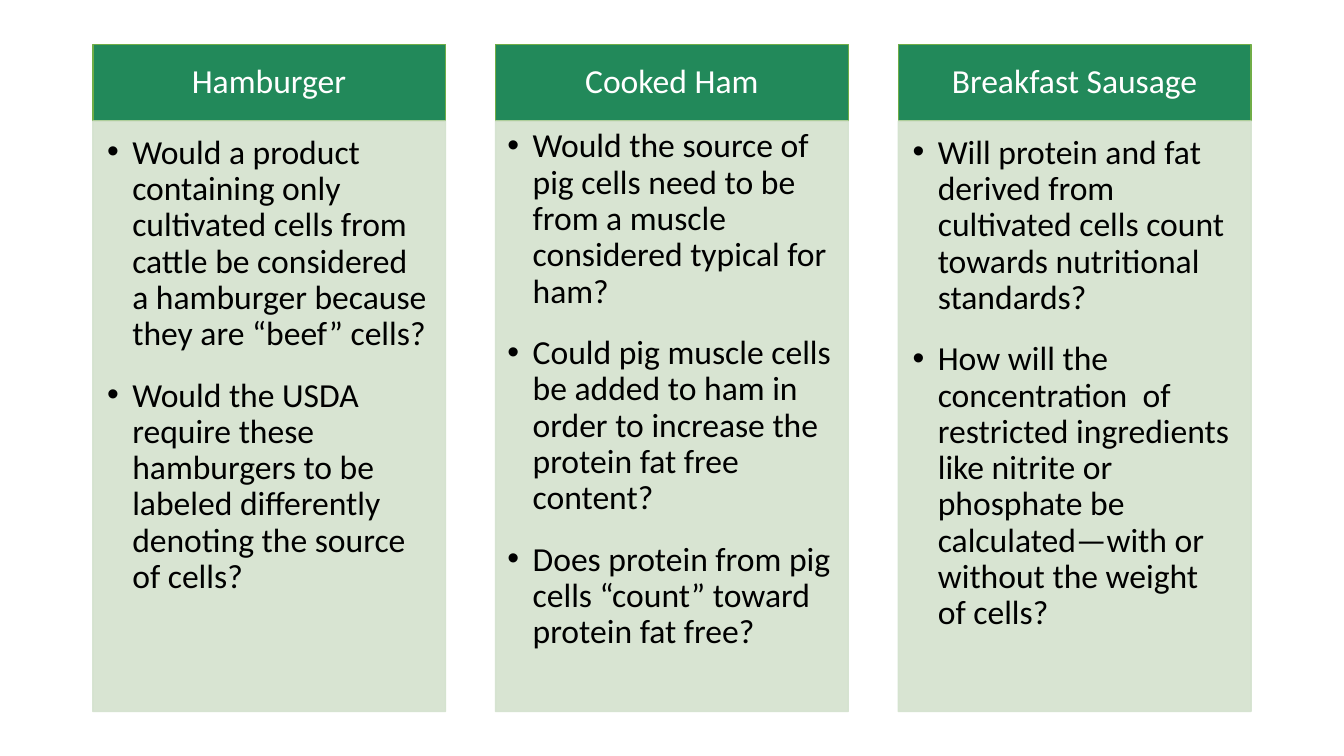
from lxml.etree import SubElement
from pptx import Presentation
from pptx.dml.color import RGBColor
from pptx.enum.shapes import MSO_SHAPE as Shape
from pptx.enum.text import MSO_ANCHOR as Anchor, PP_ALIGN as Align
from pptx.oxml.ns import qn
from pptx.util import Cm, Pt

GREEN, LIME, SAGE = "22895A", "70AD47", "D4E2CE"
LEFT, PITCH, WIDTH = 2.34, 10.15, 8.89
HEADER_TOP, HEADER_HEIGHT = 1.12, 1.93
PANEL_TOP, PANEL_HEIGHT = 3.05, 14.88

# Heading, body (top, height, inset, first space before), questions
COLUMNS = [
    ("Hamburger", (3.05, 13.36, 0.36, 4), [
        "Would a product containing only cultivated cells from cattle be considered a hamburger because they are “beef” cells?",
        "Would the USDA require these hamburgers to be labeled differently denoting the source of cells?",
    ]),
    ("Cooked Ham", (2.95, 13.89, 0.3, 3), [
        "Would the source of pig cells need to be from a muscle considered typical for ham?",
        "Could pig muscle cells be added to ham in order to increase the protein fat free content?",
        "Does protein from pig cells “count” toward protein fat free?",
    ]),
    ("Breakfast Sausage", (3.05, 13.36, 0.36, 4), [
        "Will protein and fat derived from cultivated cells count towards nutritional standards?",
        "How will the concentration  of restricted ingredients like nitrite or phosphate be calculated—with or without the weight of cells?",
    ]),
]


def paint(fill, color):
    fill.solid()
    fill.fore_color.rgb = RGBColor.from_string(color)


def add_text(left, top, width, height, lines, inset, color="000000",
             align=Align.LEFT, anchor=Anchor.TOP, first_space=10, bullets=False):
    box = page.shapes.add_textbox(Cm(left), Cm(top), Cm(width), Cm(height))
    frame = box.text_frame
    frame.word_wrap = True
    frame.vertical_anchor = anchor
    frame.margin_left = frame.margin_right = Cm(inset)
    frame.margin_top = frame.margin_bottom = Cm(inset)
    for number, line in enumerate(lines):
        para = frame.add_paragraph() if number else frame.paragraphs[0]
        para.alignment = align
        para.line_spacing = 0.9
        para.space_before = Pt(18 if number else first_space)
        span = para.add_run()
        span.text = line
        span.font.name = "Calibri"
        span.font.size = Pt(24)
        paint(span.font.fill, color)
        if bullets:
            para.level = 1
            settings = para._p.get_or_add_pPr()
            settings.set("marL", str(Cm(0.635)))
            settings.set("indent", str(-Cm(0.635)))
            SubElement(settings, qn("a:buFont"), typeface="Arial")
            SubElement(settings, qn("a:buChar"), char="•")


deck = Presentation()
deck.slide_width, deck.slide_height = Cm(33.87), Cm(19.05)
page = deck.slides.add_slide(deck.slide_layouts[6])

for index, (heading, body, questions) in enumerate(COLUMNS):
    left = LEFT + index * PITCH

    # Header bar and question panel
    for top, height, fill, line in (
        (HEADER_TOP, HEADER_HEIGHT, GREEN, LIME),
        (PANEL_TOP, PANEL_HEIGHT, SAGE, SAGE),
    ):
        block = page.shapes.add_shape(
            Shape.RECTANGLE, Cm(left), Cm(top), Cm(WIDTH), Cm(height))
        block.shadow.inherit = False
        paint(block.fill, fill)
        paint(block.line.fill, line)
        block.line.width = Pt(1)
        if fill == SAGE:
            for tint in block._element.spPr.iter(qn("a:srgbClr")):
                SubElement(tint, qn("a:alpha"), val="90000")

    # Heading
    add_text(left + 0.2, 1.3, 8.48, 1.57, [heading], 0.28, color="FFFFFF",
             align=Align.CENTER, anchor=Anchor.MIDDLE)

    # Questions
    top, height, inset, first_space = body
    add_text(left, top, 8.8, height, questions, inset,
             first_space=first_space, bullets=True)

deck.save("out.pptx")
